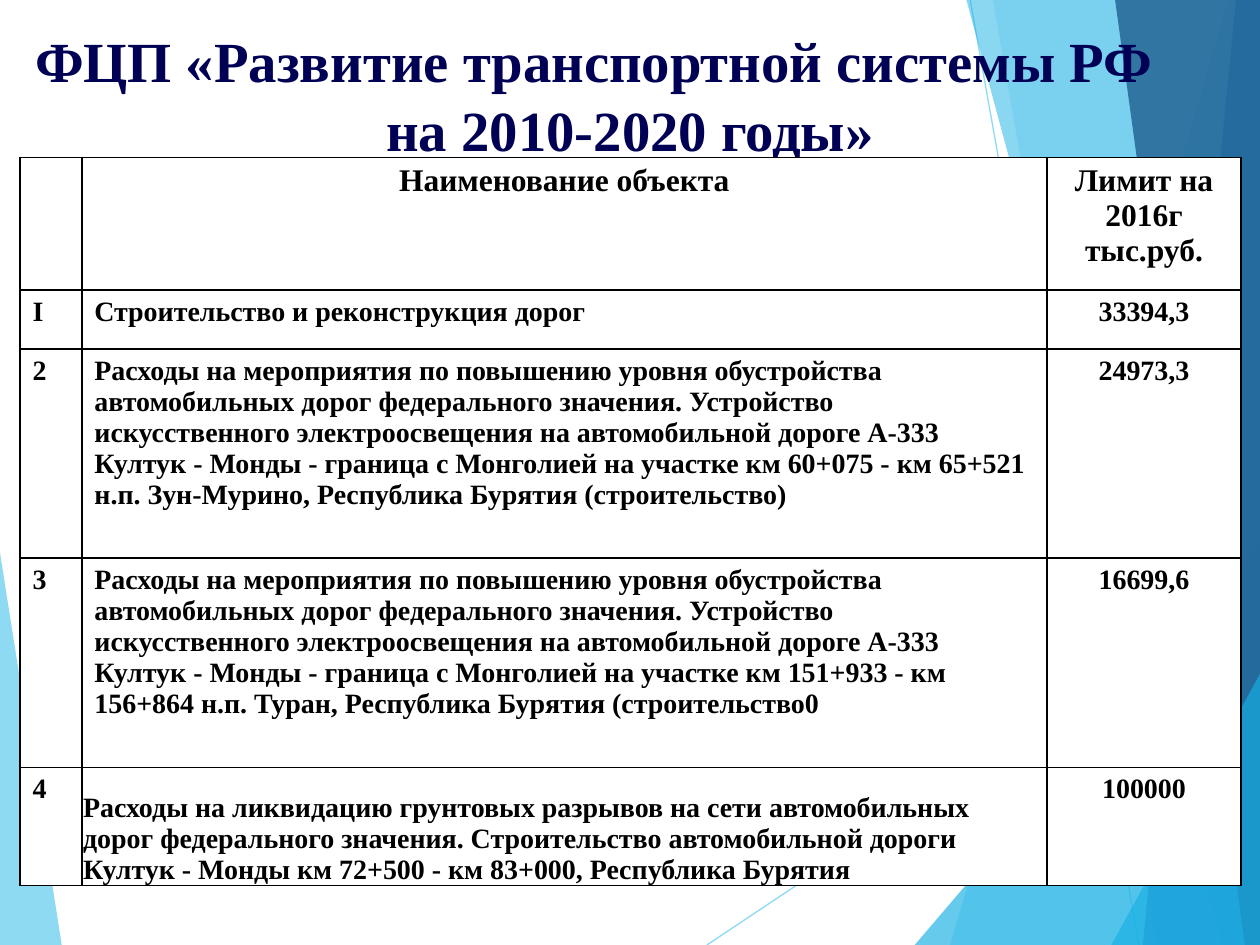
from dataclasses import dataclass

from lxml.etree import SubElement
from pptx import Presentation
from pptx.dml.color import RGBColor
from pptx.enum.shapes import MSO_CONNECTOR
from pptx.enum.text import MSO_ANCHOR, PP_ALIGN
from pptx.oxml.ns import qn
from pptx.util import Inches, Pt


@dataclass(frozen=True)
class Theme:
    """Colours and type sizes of the slide."""
    font: str = "Times New Roman"
    navy: str = "000054"
    black: str = "000000"
    white: str = "FFFFFF"
    sky: str = "5FCBEF"
    cyan: str = "17B0E4"
    blue: str = "2E83C3"
    deep: str = "226292"
    title: float = 32.4
    title_pitch: float = 38.9
    header: int = 18
    body: int = 16
    hairline: float = 0.75
    border: int = 1


@dataclass(frozen=True)
class Box:
    """A region in EMU whose inner points are given in percent."""
    left: int
    top: int
    width: int
    height: int

    def point(self, x, y):
        """Return the absolute place of a percent pair."""
        return (round(self.left + self.width * x / 100),
                round(self.top + self.height * y / 100))

    def region(self, x, y, width, height):
        """Return the inner box given in percent."""
        return Box(*self.point(x, y), round(self.width * width / 100),
                   round(self.height * height / 100))


THEME = Theme()

FACETS_BACK = [
    (THEME.sky, 70, [(0, 58.5), (4.9, 100), (0, 100)]),
]
RAYS = [((56.1, 100), (100, 61)), ((77, 0), (90.4, 100))]
FACETS_FRONT = [
    (THEME.sky, 36, [(97.5, 0), (75.4, 100), (100, 100), (100, 0)]),
    (THEME.sky, 20, [(78.8, 0), (91.9, 100), (100, 100), (100, 0)]),
    (THEME.cyan, 66, [(72.6, 100), (100, 57.2), (100, 100)]),
    (THEME.cyan, 50, [(76.7, 0), (97, 100), (100, 100), (100, 0)]),
    (THEME.blue, 70, [(98.1, 0), (90.7, 100), (100, 100), (100, 0)]),
    (THEME.deep, 82, [(88.5, 0), (98.8, 100), (100, 100), (100, 0)]),
    (THEME.cyan, 66, [(88.2, 100), (100, 71.3), (100, 100)]),
]

TITLE = ["ФЦП «Развитие транспортной системы РФ", "на 2010-2020 годы»"]
LIGHTING = ("Расходы на мероприятия по повышению уровня обустройства автомобильных "
            "дорог федерального значения. Устройство искусственного "
            "электроосвещения на автомобильной дороге А-333 Култук - Монды - "
            "граница с Монголией на участке ")
ROWS = [
    ("", "Наименование объекта", "Лимит на 2016г тыс.руб."),
    ("I", "Строительство и реконструкция дорог", "33394,3"),
    ("2", LIGHTING + "км 60+075 - км 65+521 н.п. Зун-Мурино, "
     "Республика Бурятия (строительство)", "24973,3"),
    ("3", LIGHTING + "км 151+933 - км 156+864 н.п. Туран, "
     "Республика Бурятия (строительство0", "16699,6"),
    ("4", "Расходы на ликвидацию грунтовых разрывов на сети автомобильных дорог "
     "федерального значения. Строительство автомобильной дороги Култук - Монды "
     "км 72+500 - км 83+000, Республика Бурятия", "100000"),
]
COLUMN_SHARES = [0.49, 7.66, 1.54]
ROW_SHARES = [1.05, 0.47, 1.66, 1.66, 0.94]


def apply(target, values):
    """Set attributes of an object from a dict."""
    for name, value in values.items():
        setattr(target, name, value)


def style_font(font, size, color):
    """Give a font the bold serif style of the slide."""
    apply(font, {"name": THEME.font, "size": Pt(size), "bold": True})
    font.color.rgb = RGBColor.from_string(color)


def set_opacity(fill_parent, percent):
    """Set the opacity of the solid fill inside an element."""
    color = fill_parent.find(qn("a:solidFill")).find(qn("a:srgbClr"))
    SubElement(color, qn("a:alpha")).set("val", str(percent * 1000))


def add_facets(slide, box, facets):
    """Draw translucent polygons."""
    for color, opacity, corners in facets:
        start, *others = [box.point(*corner) for corner in corners]
        builder = slide.shapes.build_freeform(*start)
        builder.add_line_segments(others, close=True)
        shape = builder.convert_to_shape()
        shape.shadow.inherit = False
        shape.fill.solid()
        shape.fill.fore_color.rgb = RGBColor.from_string(color)
        shape.line.fill.background()
        set_opacity(shape.element.spPr, opacity)


def add_rays(slide, box):
    """Draw the thin translucent lines."""
    for start, end in RAYS:
        ray = slide.shapes.add_connector(
            MSO_CONNECTOR.STRAIGHT, *box.point(*start), *box.point(*end))
        ray.line.width = Pt(THEME.hairline)
        ray.line.color.rgb = RGBColor.from_string(THEME.sky)
        properties = ray.element.spPr
        set_opacity(properties.find(qn("a:ln")), 70)
        SubElement(properties, qn("a:effectLst"))


def add_backdrop(slide, box):
    """Draw the faceted backdrop."""
    add_facets(slide, box, FACETS_BACK)
    add_rays(slide, box)
    add_facets(slide, box, FACETS_FRONT)


def add_title(slide, box):
    """Write the heading, its first line set from the left."""
    frame = slide.shapes.add_textbox(box.left, box.top, box.width, box.height).text_frame
    apply(frame, {"word_wrap": True, "vertical_anchor": MSO_ANCHOR.TOP})
    frame.text = "\n".join(TITLE)
    for paragraph, alignment in zip(frame.paragraphs, (PP_ALIGN.LEFT, PP_ALIGN.CENTER)):
        apply(paragraph, {"alignment": alignment, "line_spacing": Pt(THEME.title_pitch)})
        style_font(paragraph.font, THEME.title, THEME.navy)
    indent = round(box.width * 0.018)
    frame.paragraphs[0]._p.get_or_add_pPr().set("marL", str(indent))


def add_borders(cell):
    """Draw the four borders of a cell."""
    properties = cell._tc.get_or_add_tcPr()
    for position, side in enumerate(("lnL", "lnR", "lnT", "lnB")):
        line = SubElement(properties, qn(f"a:{side}"), w=str(Pt(THEME.border)))
        fill = SubElement(line, qn("a:solidFill"))
        SubElement(fill, qn("a:srgbClr"), val=THEME.black)
        properties.insert(position, line)


def fill_cell(cell, text, size, alignment):
    """Write and format one cell."""
    cell.text = text
    cell.fill.solid()
    cell.fill.fore_color.rgb = RGBColor.from_string(THEME.white)
    paragraph = cell.text_frame.paragraphs[0]
    paragraph.alignment = alignment
    style_font(paragraph.font, size, THEME.black)
    add_borders(cell)


def add_limits_table(slide, box):
    """Build the table of objects and their limits."""
    table = slide.shapes.add_table(len(ROWS), len(COLUMN_SHARES), box.left, box.top,
                                   box.width, box.height).table
    apply(table, {"first_row": False, "horz_banding": False})
    for column, share in zip(table.columns, COLUMN_SHARES):
        column.width = round(box.width * share / sum(COLUMN_SHARES))
    for row, share in zip(table.rows, ROW_SHARES):
        row.height = round(box.height * share / sum(ROW_SHARES))
    for row_index, texts in enumerate(ROWS):
        is_header = row_index == 0
        for column_index, text in enumerate(texts):
            centred = is_header or column_index == 2
            fill_cell(table.cell(row_index, column_index), text,
                      THEME.header if is_header else THEME.body,
                      PP_ALIGN.CENTER if centred else PP_ALIGN.LEFT)
    apply(table.cell(len(ROWS) - 1, 1), {
        "vertical_anchor": MSO_ANCHOR.BOTTOM, "margin_left": Inches(0.01),
        "margin_right": Inches(0.01), "margin_top": Inches(0.01), "margin_bottom": 0})


def main():
    """Build and save the slide."""
    presentation = Presentation()
    apply(presentation, {"slide_width": Inches(10), "slide_height": Inches(7.5)})
    slide = presentation.slides.add_slide(presentation.slide_layouts[6])
    page = Box(0, 0, presentation.slide_width, presentation.slide_height)
    add_backdrop(slide, page)
    add_title(slide, page.region(0, 2.13, 100, 15.6))
    add_limits_table(slide, page.region(1.6, 16.67, 96.9, 77.07))
    presentation.save("out.pptx")


if __name__ == "__main__":
    main()
